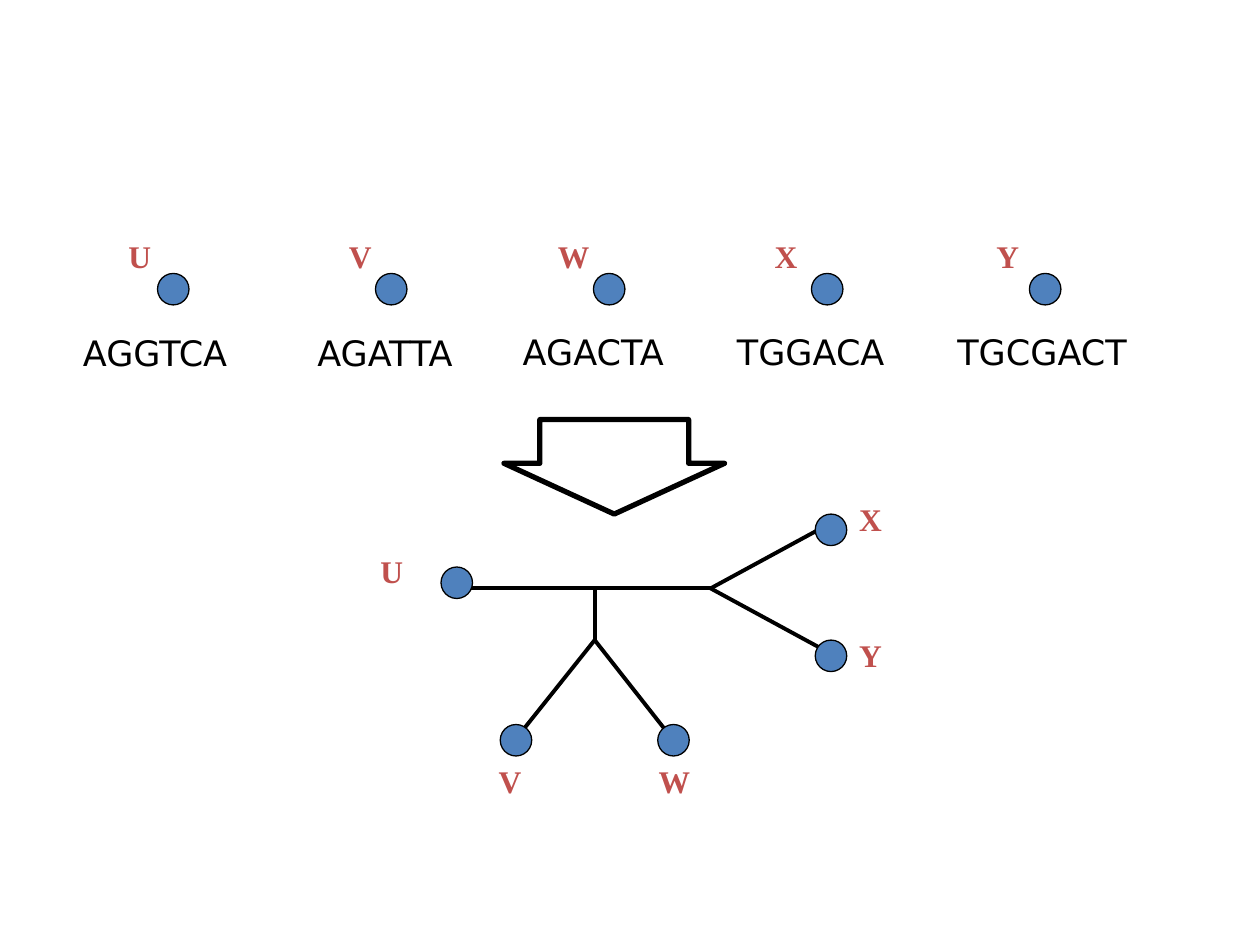
from dataclasses import dataclass

from pptx import Presentation
from pptx import util as u
from pptx.dml import color
from pptx.enum import shapes, text
from pptx.oxml import ns, xmlchemy

BLACK, BLUE, RED = "000000", "4F81BD", "C0504D"
NODE_SIZE = 0.25


@dataclass
class Taxon:
    name: str
    sequence: str
    label_left: float
    sequence_left: float
    sequence_top: float
    sequence_width: float


@dataclass
class Leaf:
    name: str
    left: float
    top: float
    label_left: float
    label_top: float


@dataclass
class Branch:
    start: tuple[float, float]
    end: tuple[float, float]


TAXA = [
    Taxon("U", "AGGTCA", 0.92, 0.56, 2.58, 1.44),
    Taxon("V", "AGATTA", 2.67, 2.42, 2.58, 1.30),
    Taxon("W", "AGACTA", 4.33, 4.05, 2.57, 1.35),
    Taxon("X", "TGGACA", 6.05, 5.75, 2.57, 1.39),
    Taxon("Y", "TGCGACT", 7.81, 7.50, 2.57, 1.56),
]
LEAVES = [
    Leaf("U", 3.50, 4.50, 2.92, 4.33),
    Leaf("V", 3.97, 5.75, 3.86, 6.00),
    Leaf("W", 5.22, 5.75, 5.13, 6.00),
    Leaf("X", 6.47, 4.08, 6.72, 3.92),
    Leaf("Y", 6.47, 5.08, 6.72, 5.00),
]
LOWER_FORK, STEM, RIGHT_FORK = (4.72, 5.08), (4.72, 4.67), (5.64, 4.67)
BRANCHES = [
    Branch((4.05, 5.92), LOWER_FORK),
    Branch((5.38, 5.92), LOWER_FORK),
    Branch((5.67, 4.67), (3.67, 4.67)),
    Branch(STEM, LOWER_FORK),
    Branch((6.56, 5.17), RIGHT_FORK),
    Branch((6.56, 4.17), RIGHT_FORK),
]


def rgb(value: str) -> color.RGBColor:
    return color.RGBColor.from_string(value)


def add_text(page, words: str, left: float, top: float, width: float, height: float,
             *, font: str, size: float, colour: str, bold: bool = False) -> None:
    box = page.shapes.add_textbox(*map(u.Inches, (left, top, width, height)))
    frame = box.text_frame
    frame.word_wrap = False
    frame.auto_size = text.MSO_AUTO_SIZE.SHAPE_TO_FIT_TEXT
    span = frame.paragraphs[0].add_run()
    span.text = words
    span.font.name = font
    span.font.size = u.Pt(size)
    span.font.bold = bold
    span.font.color.rgb = rgb(colour)


def add_label(page, name: str, left: float, top: float) -> None:
    width = 0.53 if name == "W" else 0.44
    add_text(page, name, left, top, width, 0.5,
             font="Times New Roman", size=18, colour=RED, bold=True)


def add_node(page, left: float, top: float) -> None:
    node = page.shapes.add_shape(
        shapes.MSO_SHAPE.OVAL, *map(u.Inches, (left, top, NODE_SIZE, NODE_SIZE)))
    node.shadow.inherit = False
    node.fill.solid()
    node.fill.fore_color.rgb = rgb(BLUE)
    node.line.color.rgb = rgb(BLACK)
    node.line.width = u.Pt(0.75)


def add_branch(page, branch: Branch) -> None:
    line = page.shapes.add_connector(
        shapes.MSO_CONNECTOR.STRAIGHT, *map(u.Inches, branch.start + branch.end))
    line.line.color.rgb = rgb(BLACK)
    line.line.width = u.Pt(2.25)
    line._element.spPr.append(xmlchemy.OxmlElement("a:effectLst"))


def add_down_arrow(page) -> None:
    arrow = page.shapes.add_shape(
        shapes.MSO_SHAPE.DOWN_ARROW, *map(u.Inches, (4, 3.33, 1.75, 0.75)))
    arrow.adjustments[0] = 0.675
    arrow.adjustments[1] = 0.537
    arrow.shadow.inherit = False
    arrow.fill.background()
    arrow.line.color.rgb = rgb(BLACK)
    arrow.line.width = u.Pt(3)


def main() -> None:
    deck = Presentation()
    deck.slide_width, deck.slide_height = u.Inches(10), u.Inches(7.5)
    page = deck.slides.add_slide(deck.slide_layouts[6])

    # Tree branches, behind the nodes
    for branch in BRANCHES:
        add_branch(page, branch)

    # Row of sequences, evenly spaced nodes
    for index, taxon in enumerate(TAXA):
        add_text(page, taxon.sequence, taxon.sequence_left, taxon.sequence_top,
                 taxon.sequence_width, 0.44,
                 font="DejaVu Sans", size=20, colour=BLACK)
        add_node(page, 1.25 + 1.73 * index, 2.17)
        add_label(page, taxon.name, taxon.label_left, 1.83)

    # Step from sequences to tree
    add_down_arrow(page)

    # Tree leaves
    for leaf in LEAVES:
        add_label(page, leaf.name, leaf.label_left, leaf.label_top)
        add_node(page, leaf.left, leaf.top)

    deck.save("out.pptx")


if __name__ == "__main__":
    main()
